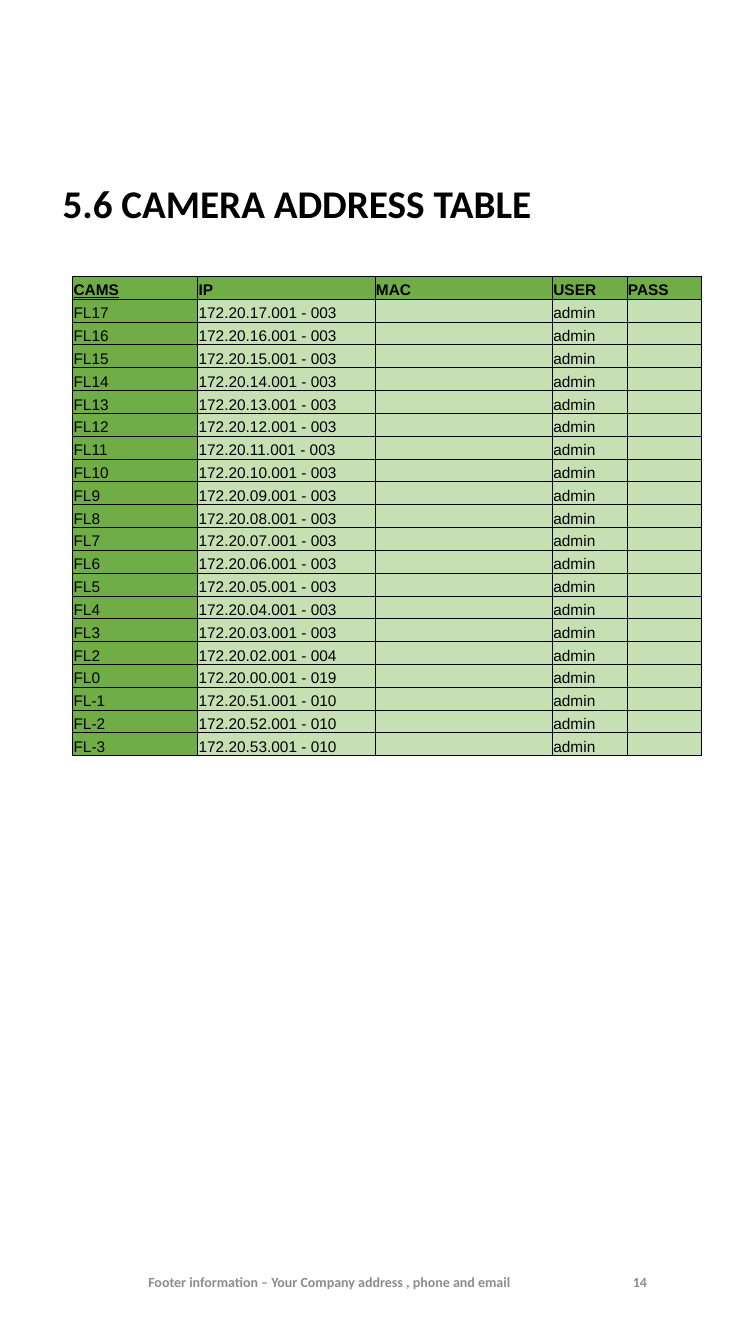
from lxml.etree import SubElement
from pptx import Presentation
from pptx.dml.color import RGBColor
from pptx.enum.text import MSO_ANCHOR, MSO_AUTO_SIZE, PP_ALIGN
from pptx.oxml.ns import qn
from pptx.util import Inches, Pt

TITLE = "5.6 CAMERA ADDRESS TABLE"
FOOTER = "Footer information – Your Company address , phone and email"
PAGE_NUMBER = "14"
HEADINGS = ("CAMS", "IP", "MAC", "USER", "PASS")
USER = "admin"
UPPER_FLOORS = [(f"FL{floor}", f"{floor:02}", "003") for floor in range(17, 2, -1)]
LOWER_FLOORS = [
    ("FL2", "02", "004"),
    ("FL0", "00", "019"),
    ("FL-1", "51", "010"),
    ("FL-2", "52", "010"),
    ("FL-3", "53", "010"),
]
CAMERAS = [
    (floor, f"172.20.{subnet}.001 - {last}", "", USER, "")
    for floor, subnet, last in UPPER_FLOORS + LOWER_FLOORS
]

TITLE_BOX = (0.52, 1.48, 6.47, 1.12)
FOOTER_BOX = (0.49, 12.36, 5.55, 0.71)
NUMBER_BOX = (6.18, 12.36, 0.81, 0.71)
TABLE_BOX = (0.72, 2.74, 6.24, 4.76)
COLUMN_WIDTHS = (1.24, 1.76, 1.76, 0.74, 0.74)

THEME = {
    "header_fill": RGBColor.from_string("70AD47"),
    "body_fill": RGBColor.from_string("C6E0B4"),
    "border": "000000",
    "outer_line": Pt(1),
    "inner_line": Pt(0.5),
    "title": {"name": "Calibri", "size": Pt(28), "bold": True, "color": "000000"},
    "footer": {"name": "Calibri", "size": Pt(10), "bold": True, "color": "8C8C8C"},
    "cell": {"name": "Arial", "size": Pt(11), "bold": False, "color": "000000"},
}
CELL_FORMAT = {
    "margin_left": Inches(0.01),
    "margin_top": Inches(0.01),
    "margin_right": Inches(0.01),
    "margin_bottom": 0,
    "vertical_anchor": MSO_ANCHOR.BOTTOM,
}
FRAME_FORMAT = {
    "word_wrap": True,
    "auto_size": MSO_AUTO_SIZE.NONE,
    "vertical_anchor": MSO_ANCHOR.MIDDLE,
}


def set_attributes(target, values):
    for name, value in values.items():
        setattr(target, name, value)


def write_run(paragraph, text, style, **extra):
    run = paragraph.add_run()
    run.text = text
    values = {**style, **extra}
    run.font.color.rgb = RGBColor.from_string(values.pop("color"))
    set_attributes(run.font, values)


def fill_frame(shape, box, text, style, alignment):
    names = ("left", "top", "width", "height")
    set_attributes(shape, dict(zip(names, map(Inches, box))))
    set_attributes(shape.text_frame, FRAME_FORMAT)
    paragraph = shape.text_frame.paragraphs[0]
    paragraph.alignment = alignment
    write_run(paragraph, text, style)
    return paragraph


def draw_borders(cell, widths):
    properties = cell._tc.get_or_add_tcPr()
    for side, width in widths.items():
        line = SubElement(properties, qn(f"a:ln{side}"), w=str(width))
        fill = SubElement(line, qn("a:solidFill"))
        SubElement(fill, qn("a:srgbClr"), val=THEME["border"])


def add_camera_table(slide):
    rows = [HEADINGS, *CAMERAS]
    left, top, width, height = map(Inches, TABLE_BOX)
    shape = slide.shapes.add_table(len(rows), len(HEADINGS), left, top, width, height)
    table = shape.table
    set_attributes(table, {"first_row": False, "horz_banding": False})
    for column, column_width in zip(table.columns, COLUMN_WIDTHS):
        column.width = Inches(column_width)
    outer, inner = THEME["outer_line"], THEME["inner_line"]
    last_column = len(HEADINGS) - 1
    for row_index, values in enumerate(rows):
        table.rows[row_index].height = round(height / len(rows))
        is_header = row_index == 0
        for column_index, text in enumerate(values):
            cell = table.cell(row_index, column_index)
            set_attributes(cell, CELL_FORMAT)
            draw_borders(cell, {
                "L": outer if column_index == 0 else inner,
                "R": outer if column_index == last_column else inner,
                "T": outer if is_header else inner,
                "B": inner,
            })
            is_green = is_header or column_index == 0
            cell.fill.solid()
            cell.fill.fore_color.rgb = THEME["header_fill" if is_green else "body_fill"]
            paragraph = cell.text_frame.paragraphs[0]
            if text:
                write_run(paragraph, text, THEME["cell"], bold=is_header,
                          underline=is_header and column_index == 0)
            else:
                size = round(THEME["cell"]["size"].pt * 100)
                SubElement(paragraph._p, qn("a:endParaRPr"), sz=str(size))


def main():
    presentation = Presentation()
    presentation.slide_width = Inches(7.5)
    presentation.slide_height = Inches(13.33)
    slide = presentation.slides.add_slide(presentation.slide_layouts[5])
    title = fill_frame(slide.shapes.title, TITLE_BOX, TITLE, THEME["title"], PP_ALIGN.LEFT)
    title.line_spacing = 0.9
    add_camera_table(slide)
    for box, text, alignment in (
        (FOOTER_BOX, FOOTER, PP_ALIGN.CENTER),
        (NUMBER_BOX, PAGE_NUMBER, PP_ALIGN.LEFT),
    ):
        text_box = slide.shapes.add_textbox(*map(Inches, box))
        fill_frame(text_box, box, text, THEME["footer"], alignment)
    presentation.save("out.pptx")


if __name__ == "__main__":
    main()
